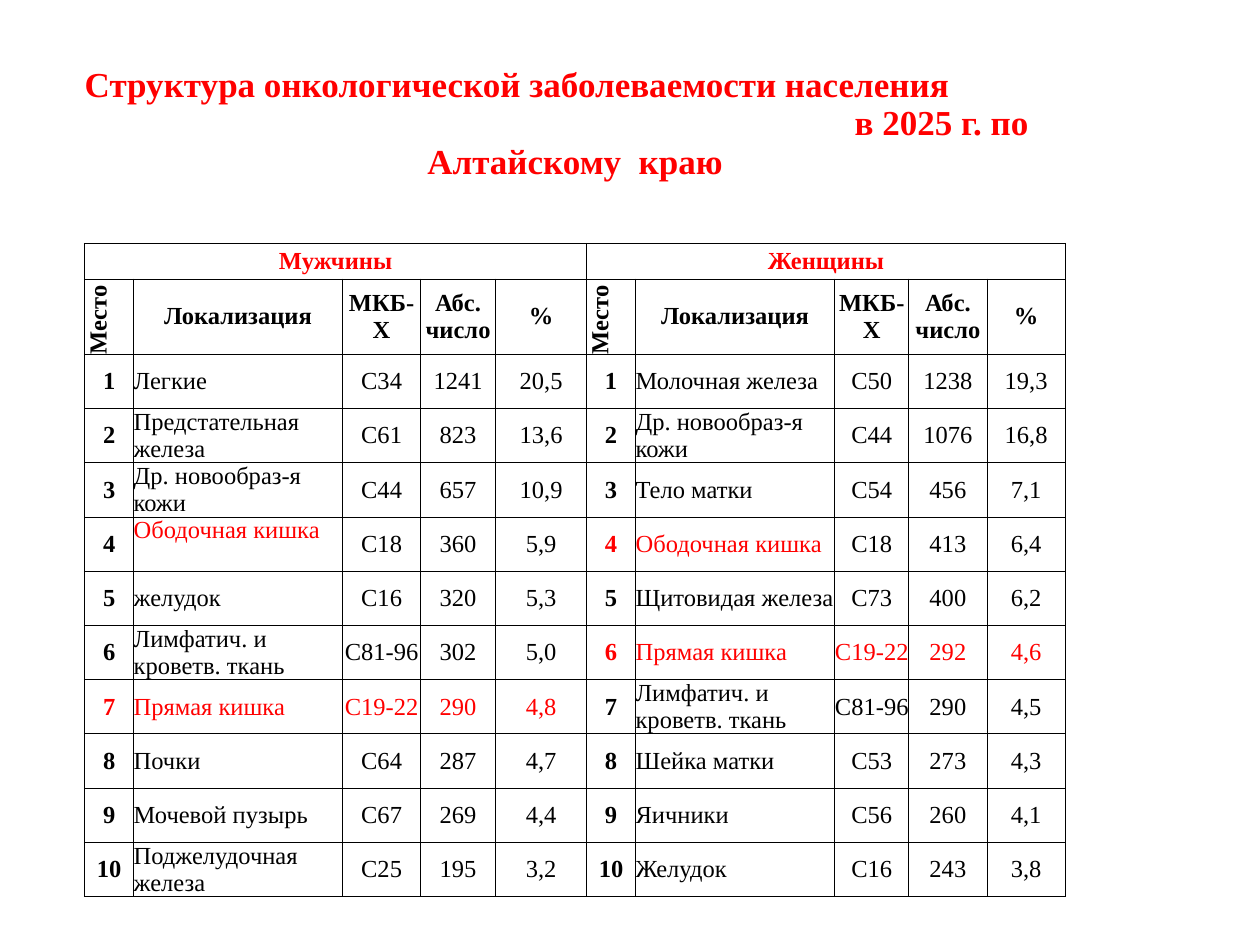
from dataclasses import dataclass

from lxml.etree import SubElement
from pptx import Presentation
from pptx.dml.color import RGBColor
from pptx.enum.text import MSO_ANCHOR as Anchor, PP_ALIGN as Align
from pptx.oxml.ns import qn
from pptx.util import Pt


@dataclass(frozen=True)
class Theme:
    face: str = "Times New Roman"
    accent: str = "FF0000"
    ink: str = "000000"
    title_size: int = 20
    body_size: int = 14
    thin: float = 0.5
    thick: float = 1


THEME = Theme()
TITLE = [
    ("Структура онкологической заболеваемости населения", Align.LEFT, 0),
    ("в 2025 г. по", Align.LEFT, 440),
    ("Алтайскому  краю", Align.CENTER, 0),
]
GROUPS = ["Мужчины", "Женщины"]
HEADINGS = ["Место ", "Локализация", "МКБ-X", "Абс. число", "%"]
MEN = [
    ("Легкие", "С34", "1241", "20,5"),
    ("Предстательная железа", "С61", "823", "13,6"),
    ("Др. новообраз-я кожи", "С44", "657", "10,9"),
    ("Ободочная кишка", "С18", "360", "5,9"),
    ("желудок", "С16", "320", "5,3"),
    ("Лимфатич. и кроветв. ткань", "С81-96", "302", "5,0"),
    ("Прямая кишка", "С19-22", "290", "4,8"),
    ("Почки", "С64", "287", "4,7"),
    ("Мочевой пузырь", "C67", "269", "4,4"),
    ("Поджелудочная железа", "С25", "195", "3,2"),
]
WOMEN = [
    ("Молочная железа", "С50", "1238", "19,3"),
    ("Др. новообраз-я кожи", "С44", "1076", "16,8"),
    ("Тело матки", "С54", "456", "7,1"),
    ("Ободочная кишка", "С18", "413", "6,4"),
    ("Щитовидая железа", "C73", "400", "6,2"),
    ("Прямая кишка", "С19-22", "292", "4,6"),
    ("Лимфатич. и кроветв. ткань", "С81-96", "290", "4,5"),
    ("Шейка матки", "С53", "273", "4,3"),
    ("Яичники", "С56", "260", "4,1"),
    ("Желудок", "С16", "243", "3,8"),
]
# group index, rank -> highlighted columns
HIGHLIGHTS = {(0, 4): {1}, (0, 7): set(range(5)), (1, 4): {0, 1}, (1, 6): set(range(5))}
TOP_ALIGNED = (0, 4, 1)

LEFT, TOP = 48.4, 37.6
WIDTHS = [28, 119.4, 44.6, 42.9, 52, 28, 113.8, 42.4, 44.6, 44.9, 57.6]
HEIGHTS = [66.4, 16.6, 18, 20.2, 42.8] + [31] * len(MEN)
GROUP_ROW, HEADING_ROW, FIRST_RANK_ROW = 3, 4, 5
SPAN = len(HEADINGS)
GRID_COLS = SPAN * len(GROUPS)


def style(paragraph, align, size=THEME.body_size, color=THEME.ink, bold=False):
    """Set the alignment and font of a paragraph."""
    paragraph.alignment = align
    font = paragraph.font
    font.name, font.size, font.bold = THEME.face, Pt(size), bold
    font.color.rgb = RGBColor.from_string(color)


def write(cell, text, align=Align.CENTER, **look):
    """Put one styled paragraph in a cell."""
    cell.text = text
    style(cell.text_frame.paragraphs[0], align, **look)


def border_widths(row, col):
    """Return the widths of the left, right, top and bottom borders of a cell."""
    if row < GROUP_ROW:
        bottom = THEME.thick if row == GROUP_ROW - 1 and col < GRID_COLS else 0
        return {"lnL": 0, "lnR": 0, "lnT": 0, "lnB": bottom}
    if col == GRID_COLS:
        return {"lnL": THEME.thick, "lnR": 0, "lnT": 0, "lnB": 0}
    return {
        "lnL": THEME.thick if col == 0 else THEME.thin,
        "lnR": THEME.thick if col == GRID_COLS - 1 else THEME.thin,
        "lnT": THEME.thick if row == GROUP_ROW else THEME.thin,
        "lnB": THEME.thin,
    }


def prepare(cell, row, col):
    """Give a cell its margins, anchor, borders and empty-text size."""
    cell.margin_left = cell.margin_right = cell.margin_top = cell.margin_bottom = 0
    cell.vertical_anchor = Anchor.MIDDLE
    properties = cell._tc.get_or_add_tcPr()
    for side, width in border_widths(row, col).items():
        line = SubElement(properties, qn(f"a:{side}"), w=str(int(Pt(width))))
        if width:
            fill = SubElement(line, qn("a:solidFill"))
            SubElement(fill, qn("a:srgbClr"), val=THEME.ink)
        else:
            SubElement(line, qn("a:noFill"))
    cell.fill.background()
    if row < GROUP_ROW or col == GRID_COLS:
        ending = cell.text_frame.paragraphs[0]._p
        SubElement(ending, qn("a:endParaRPr"), sz=str(THEME.body_size * 100))


def fill_title(cell):
    """Write the title lines with their alignment and indent."""
    cell.vertical_anchor = Anchor.BOTTOM
    cell.text = "\n".join(text for text, _, _ in TITLE)
    for paragraph, (_, align, indent) in zip(cell.text_frame.paragraphs, TITLE):
        paragraph._p.get_or_add_pPr().set("marL", str(int(Pt(indent))))
        style(paragraph, align, THEME.title_size, THEME.accent, True)


def fill_group(table, group, ranking):
    """Write the heading rows and the ranking of one population group."""
    start = group * SPAN
    heading = table.cell(GROUP_ROW, start)
    heading.merge(table.cell(GROUP_ROW, start + SPAN - 1))
    write(heading, GROUPS[group], color=THEME.accent, bold=True)
    for col, text in enumerate(HEADINGS):
        write(table.cell(HEADING_ROW, start + col), text, bold=True)
    table.cell(HEADING_ROW, start)._tc.get_or_add_tcPr().set("vert", "vert270")
    for rank, entry in enumerate(ranking, 1):
        marked = HIGHLIGHTS.get((group, rank), set())
        for col, text in enumerate((str(rank), *entry)):
            cell = table.cell(FIRST_RANK_ROW + rank - 1, start + col)
            write(cell, text, Align.LEFT if col == 1 else Align.CENTER,
                  color=THEME.accent if col in marked else THEME.ink, bold=col == 0)
            if (group, rank, col) == TOP_ALIGNED:
                cell.vertical_anchor = Anchor.TOP


def main():
    """Build the incidence table slide."""
    deck = Presentation()
    deck.slide_width, deck.slide_height = Pt(720), Pt(540)
    slide = deck.slides.add_slide(deck.slide_layouts[6])
    table = slide.shapes.add_table(len(HEIGHTS), len(WIDTHS), Pt(LEFT), Pt(TOP),
                                   Pt(sum(WIDTHS)), Pt(sum(HEIGHTS))).table
    table.first_row = table.horz_banding = False
    for column, width in zip(table.columns, WIDTHS):
        column.width = Pt(width)
    for row, height in enumerate(HEIGHTS):
        table.rows[row].height = Pt(height)
        for col in range(len(WIDTHS)):
            prepare(table.cell(row, col), row, col)
    title = table.cell(0, 0)
    title.merge(table.cell(0, GRID_COLS - 1))
    fill_title(title)
    for group, ranking in enumerate((MEN, WOMEN)):
        fill_group(table, group, ranking)
    deck.save("out.pptx")


if __name__ == "__main__":
    main()
